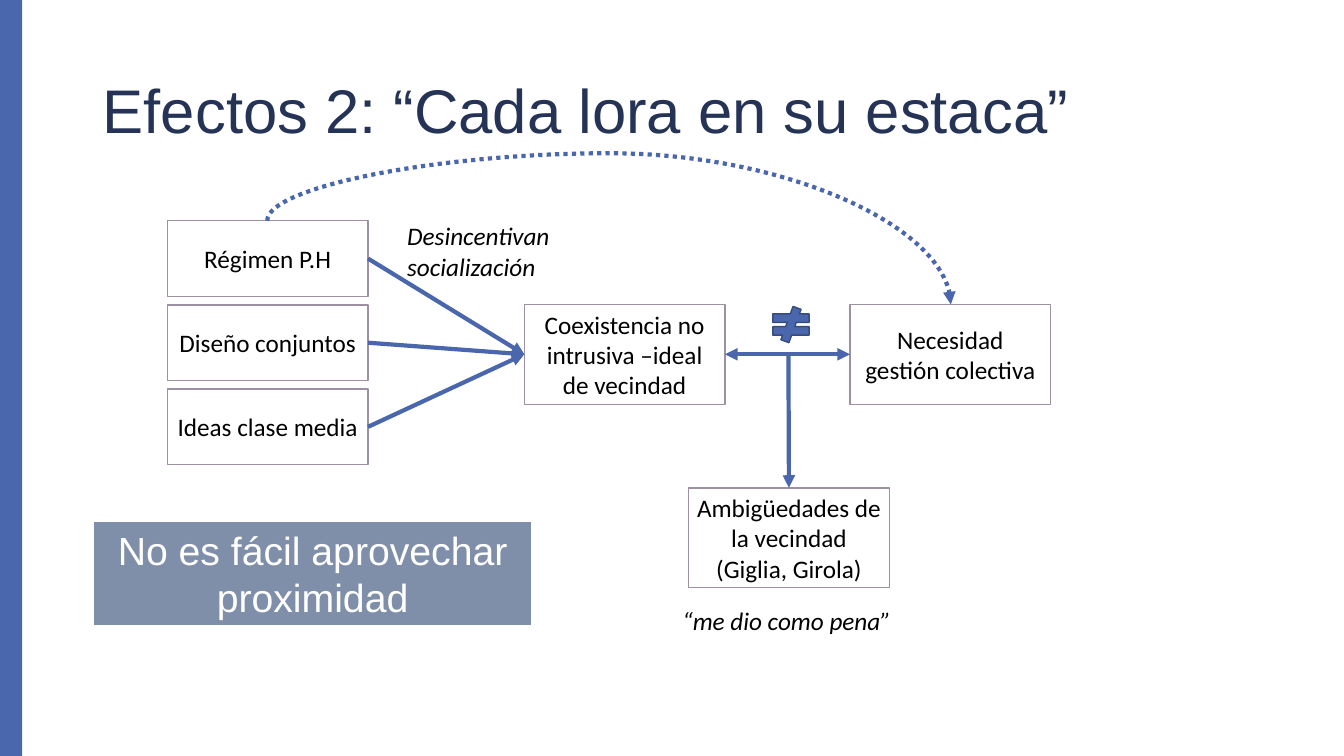
from dataclasses import dataclass

from lxml import etree
from pptx import Presentation
from pptx.dml.color import RGBColor
from pptx.enum.dml import MSO_LINE
from pptx.enum.shapes import MSO_CONNECTOR, MSO_SHAPE
from pptx.enum.text import MSO_ANCHOR, MSO_AUTO_SIZE, PP_ALIGN
from pptx.oxml.ns import qn
from pptx.util import Inches, Pt

STRAIGHT, CURVE = MSO_CONNECTOR.STRAIGHT, MSO_CONNECTOR.CURVE
RECTANGLE, PROCESS = MSO_SHAPE.RECTANGLE, MSO_SHAPE.FLOWCHART_PROCESS
NOT_EQUAL = MSO_SHAPE.MATH_NOT_EQUAL
LEFT, CENTER = PP_ALIGN.LEFT, PP_ALIGN.CENTER
TOP, MIDDLE = MSO_ANCHOR.TOP, MSO_ANCHOR.MIDDLE
NO_FIT, GROW = MSO_AUTO_SIZE.NONE, MSO_AUTO_SIZE.SHAPE_TO_FIT_TEXT
TITLE_ONLY = 5
TOP_SIDE, LEFT_SIDE, BOTTOM_SIDE, RIGHT_SIDE = range(4)

COLORS = {
    "blue": "4A66AC", "dark_blue": "374B7F", "title": "253356",
    "border": "9D90A0", "banner": "7F8FA9", "white": "FFFFFF", "black": "000000",
}
BOX_WIDTH, CAUSE_HEIGHT, IDEA_HEIGHT = 1.99, 0.75, 0.99
CAUSE_TOP, CAUSE_STEP = 2.19, 0.835


@dataclass
class Area:
    left: float
    top: float
    width: float
    height: float

    def inches(self) -> list:
        return [Inches(v) for v in (self.left, self.top, self.width, self.height)]


@dataclass
class TextStyle:
    size: float = 18
    font: str = "Calibri"
    color: str = "black"
    italic: bool = False
    align: int = CENTER
    anchor: int = MIDDLE
    fit: int = NO_FIT
    side_margin: float = 0.1


def rgb(name: str) -> RGBColor:
    return RGBColor.from_string(COLORS[name])


def write(shape, text: str, style: TextStyle) -> None:
    frame = shape.text_frame
    frame.text = text
    frame_format = {
        "word_wrap": True, "auto_size": style.fit, "vertical_anchor": style.anchor,
        "margin_left": Inches(style.side_margin), "margin_right": Inches(style.side_margin),
    }
    for name, value in frame_format.items():
        setattr(frame, name, value)
    paragraph = frame.paragraphs[0]
    paragraph.alignment = style.align
    font_format = {"size": Pt(style.size), "name": style.font, "italic": style.italic}
    for name, value in font_format.items():
        setattr(paragraph.font, name, value)
    paragraph.font.color.rgb = rgb(style.color)


def add_figure(slide, kind: int, area: Area, fill: str, line: str = "", weight: float = 1):
    figure = slide.shapes.add_shape(kind, *area.inches())
    figure.shadow.inherit = False
    figure.fill.solid()
    figure.fill.fore_color.rgb = rgb(fill)
    if line:
        figure.line.color.rgb = rgb(line)
        figure.line.width = Pt(weight)
    else:
        figure.line.fill.background()
    return figure


def add_process(slide, text: str, left: float, top: float, height: float):
    box = add_figure(slide, PROCESS, Area(left, top, BOX_WIDTH, height), "white", "border")
    write(box, text, TextStyle(side_margin=0.08))
    return box


def add_note(slide, text: str, area: Area) -> None:
    note = slide.shapes.add_textbox(*area.inches())
    write(note, text, TextStyle(italic=True, align=LEFT, anchor=TOP, fit=GROW))


def add_arrow(slide, kind: int, start: tuple, end: tuple, both: bool = False):
    arrow = slide.shapes.add_connector(kind, *[Inches(v) for v in (*start, *end)])
    arrow.line.color.rgb = rgb("blue")
    arrow.line.width = Pt(3)
    outline = arrow.line._get_or_add_ln()
    for tag in ("a:headEnd", "a:tailEnd") if both else ("a:tailEnd",):
        etree.SubElement(outline, qn(tag), type="triangle")
    etree.SubElement(arrow._element.spPr, qn("a:effectLst"))
    return arrow


def join(slide, source, target, both: bool = False) -> None:
    arrow = add_arrow(slide, STRAIGHT, (0, 0), (1, 1), both)
    arrow.begin_connect(source, RIGHT_SIDE)
    arrow.end_connect(target, LEFT_SIDE)


def add_arc(slide, start: tuple, end: tuple, rise: float) -> None:
    """Arched arrow: a curved connector turned a quarter to leave upwards."""
    width, height = end[0] - start[0], end[1] - start[1]
    mid_x, mid_y = (start[0] + end[0]) / 2, (start[1] + end[1]) / 2
    arc = add_arrow(slide, CURVE, (mid_x + height / 2, mid_y - width / 2),
                    (mid_x - height / 2, mid_y + width / 2))
    arc.line.dash_style = MSO_LINE.ROUND_DOT
    properties = arc._element.spPr
    properties.find(qn("a:xfrm")).set("rot", str(270 * 60000))
    guides = properties.find(qn("a:prstGeom")).get_or_add_avLst()
    bend = round(-rise / height * 100000)
    etree.SubElement(guides, qn("a:gd"), name="adj1", fmla=f"val {bend}")


def main() -> None:
    prs = Presentation()
    prs.slide_width, prs.slide_height = Inches(13.33), Inches(7.5)
    slide = prs.slides.add_slide(prs.slide_layouts[TITLE_ONLY])

    # Side bar and title
    add_figure(slide, RECTANGLE, Area(0, 0, 0.22, 7.5), "blue")
    title = slide.shapes.title
    title.left, title.top, title.width, title.height = Area(0.92, 0.4, 11.5, 1.45).inches()
    write(title, "Efectos 2: “Cada lora en su estaca”",
          TextStyle(44, "Arial", "title", align=LEFT))
    title.text_frame.paragraphs[0].line_spacing = 0.9

    # Causes and the ideas they lead to
    causes = [
        add_process(slide, text, 1.66, CAUSE_TOP + row * CAUSE_STEP, CAUSE_HEIGHT)
        for row, text in enumerate(("Régimen P.H", "Diseño conjuntos", "Ideas clase media"))
    ]
    coexistence = add_process(slide, "Coexistencia no intrusiva –ideal de vecindad",
                              5.2, 3.02, IDEA_HEIGHT)
    need = add_process(slide, "Necesidad gestión colectiva", 8.43, 3.02, IDEA_HEIGHT)
    ambiguity = add_process(slide, "Ambigüedades de la vecindad (Giglia, Girola)",
                            6.83, 4.84, IDEA_HEIGHT)

    # Arrows
    for cause in causes:
        join(slide, cause, coexistence)
    join(slide, coexistence, need, both=True)
    tension = add_arrow(slide, STRAIGHT, (7.82, 3.52), (7.82, 4.84))
    tension.end_connect(ambiguity, TOP_SIDE)
    add_arc(slide, (2.65, 2.19), (9.43, 3.02), 0.67)

    # Notes and unequal sign
    add_note(slide, "Desincentivan socialización", Area(3.94, 2.14, 1.69, 0.71))
    add_note(slide, "“me dio como pena”", Area(6.67, 5.96, 2.84, 0.4))
    add_figure(slide, NOT_EQUAL, Area(7.6, 3.04, 0.49, 0.36), "blue", "dark_blue")

    # Conclusion banner
    conclusion = add_figure(slide, RECTANGLE, Area(0.92, 5.17, 4.36, 1.04),
                            "banner", "white", 1.5)
    write(conclusion, "No es fácil aprovechar proximidad",
          TextStyle(28, "Arial", "white", anchor=TOP, fit=GROW))

    prs.save("out.pptx")


if __name__ == "__main__":
    main()
